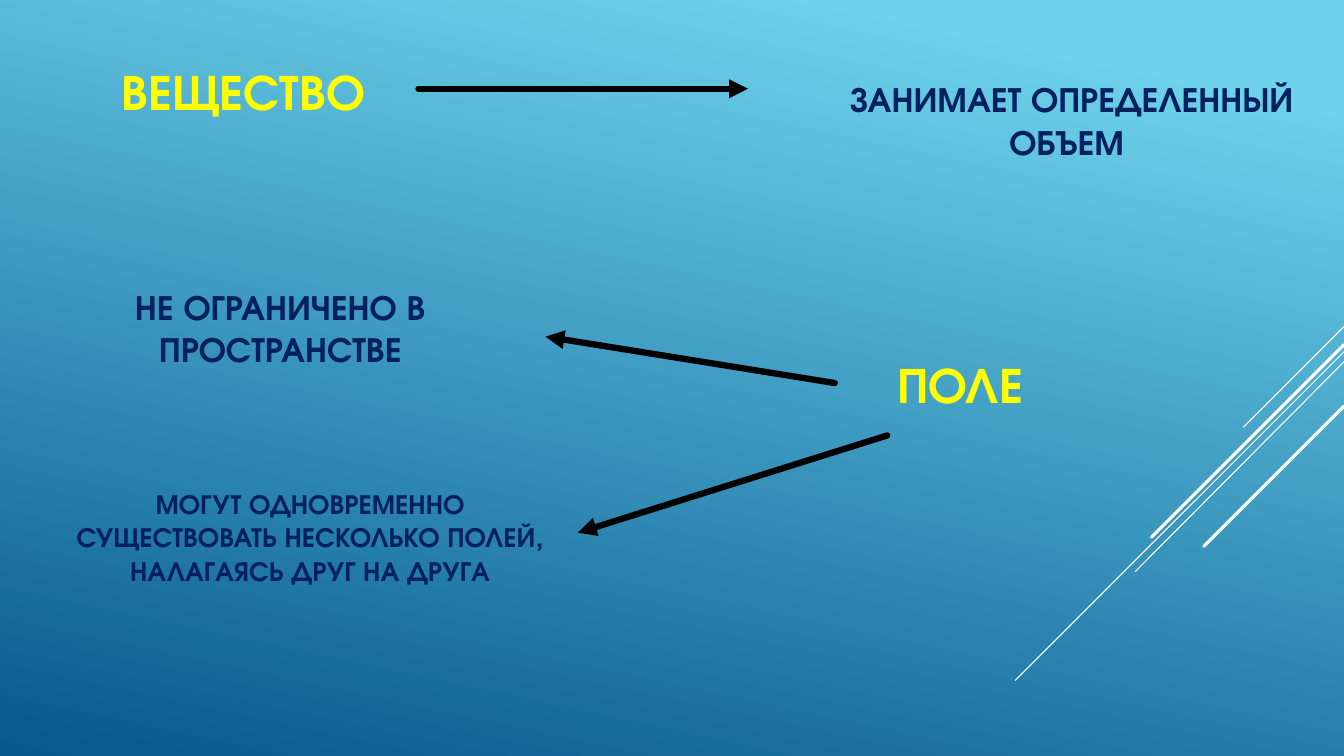
from dataclasses import dataclass
from typing import Optional

import pptx
import pptx.dml.color
import pptx.enum.shapes
import pptx.enum.text
import pptx.oxml.ns
import pptx.util
from lxml import etree

Inches = pptx.util.Inches
RGBColor = pptx.dml.color.RGBColor
Align = pptx.enum.text.PP_ALIGN

SKY = RGBColor(0x6E, 0xD2, 0xEB)
DEEP_BLUE = RGBColor(0x06, 0x58, 0x8E)
WHITE = RGBColor(0xFF, 0xFF, 0xFF)
BLACK = RGBColor(0, 0, 0)
YELLOW = RGBColor(0xFF, 0xFF, 0)
NAVY = RGBColor(0, 0x20, 0x60)
FONT = "TeX Gyre Adventor"


@dataclass
class Label:
    text: str
    left: float
    top: float
    width: float
    height: float
    size: float
    color: RGBColor = NAVY
    align: Align = Align.CENTER


@dataclass
class Stroke:
    start: tuple[float, float]
    end: tuple[float, float]
    weight: float
    color: RGBColor = WHITE
    arrow: bool = False
    start_box: Optional[str] = None
    end_box: Optional[str] = None


SUBSTANCE = Label("ВЕЩЕСТВО", 1.11, 0.51, 3.04, 0.74, 36, YELLOW, Align.LEFT)
LABELS = [
    Label("ПОЛЕ", 8.8, 3.41, 1.8, 0.74, 36, YELLOW, Align.LEFT),
    Label("НЕ ОГРАНИЧЕНО В ПРОСТРАНСТВЕ", 0.41, 2.92, 4.74, 0.8, 25.2),
    Label("ЗАНИМАЕТ ОПРЕДЕЛЕННЫЙ ОБЪЕМ ", 8.26, 0.86, 4.74, 0.8, 25.2),
]
OVERLAP = Label(
    "МОГУТ ОДНОВРЕМЕННО СУЩЕСТВОВАТЬ НЕСКОЛЬКО ПОЛЕЙ, НАЛАГАЯСЬ ДРУГ НА ДРУГА",
    0.42, 4.7, 5.31, 1.17, 19.8,
)
RAYS = [
    Stroke((13.33, 3.24), (12.33, 4.24), 0.75),
    Stroke((13.33, 3.49), (10.07, 6.75), 0.75),
    Stroke((13.33, 3.59), (11.26, 5.67), 0.75),
    Stroke((13.33, 3.42), (11.42, 5.33), 2.25),
    Stroke((13.33, 4.03), (11.94, 5.42), 2.25),
]
ARROWS = [
    Stroke((4.15, 0.88), (7.42, 0.88), 4.5, BLACK, True, start_box=SUBSTANCE.text),
    Stroke((8.28, 3.8), (5.41, 3.34), 4.5, BLACK, True),
    Stroke((8.8, 4.32), (5.74, 5.27), 4.5, BLACK, True, end_box=OVERLAP.text),
]


def paint_background(page) -> None:
    fill = page.background.fill
    fill.gradient()
    fill.gradient_angle = 258
    for stop, color, position in zip(fill.gradient_stops, (SKY, DEEP_BLUE), (0.1, 1)):
        stop.color.rgb = color
        stop.position = position


def write_label(box, label: Label) -> None:
    box.left, box.top = Inches(label.left), Inches(label.top)
    box.width, box.height = Inches(label.width), Inches(label.height)
    frame = box.text_frame
    frame.text = label.text
    frame.word_wrap = True
    frame.auto_size = pptx.enum.text.MSO_AUTO_SIZE.NONE
    frame.vertical_anchor = pptx.enum.text.MSO_ANCHOR.BOTTOM
    para = frame.paragraphs[0]
    para.alignment = label.align
    font = para.runs[0].font
    font.name = FONT
    font.size = pptx.util.Pt(label.size)
    font.bold = True
    font.color.rgb = label.color


def draw_stroke(page, stroke: Stroke, boxes: dict) -> None:
    line = page.shapes.add_connector(
        pptx.enum.shapes.MSO_CONNECTOR.STRAIGHT,
        *(Inches(value) for value in stroke.start + stroke.end),
    )
    line.line.color.rgb = stroke.color
    line.line.width = pptx.util.Pt(stroke.weight)
    if stroke.start_box:
        line.begin_connect(boxes[stroke.start_box], 3)
    if stroke.end_box:
        line.end_connect(boxes[stroke.end_box], 3)
    properties = line._element.spPr
    outline = properties.find(pptx.oxml.ns.qn("a:ln"))
    outline.set("cap", "rnd")
    if stroke.arrow:
        etree.SubElement(outline, pptx.oxml.ns.qn("a:tailEnd"), type="triangle")
    etree.SubElement(properties, pptx.oxml.ns.qn("a:effectLst"))


def main() -> None:
    deck = pptx.Presentation()
    deck.slide_width, deck.slide_height = Inches(13.33), Inches(7.5)
    page = deck.slides.add_slide(deck.slide_layouts[5])
    paint_background(page)
    boxes = {SUBSTANCE.text: page.shapes.title}
    write_label(page.shapes.title, SUBSTANCE)
    for ray in RAYS:
        draw_stroke(page, ray, boxes)
    for label in LABELS + [OVERLAP]:
        boxes[label.text] = page.shapes.add_textbox(0, 0, 0, 0)
        write_label(boxes[label.text], label)
    for arrow in ARROWS:
        draw_stroke(page, arrow, boxes)
    deck.save("out.pptx")


if __name__ == "__main__":
    main()
